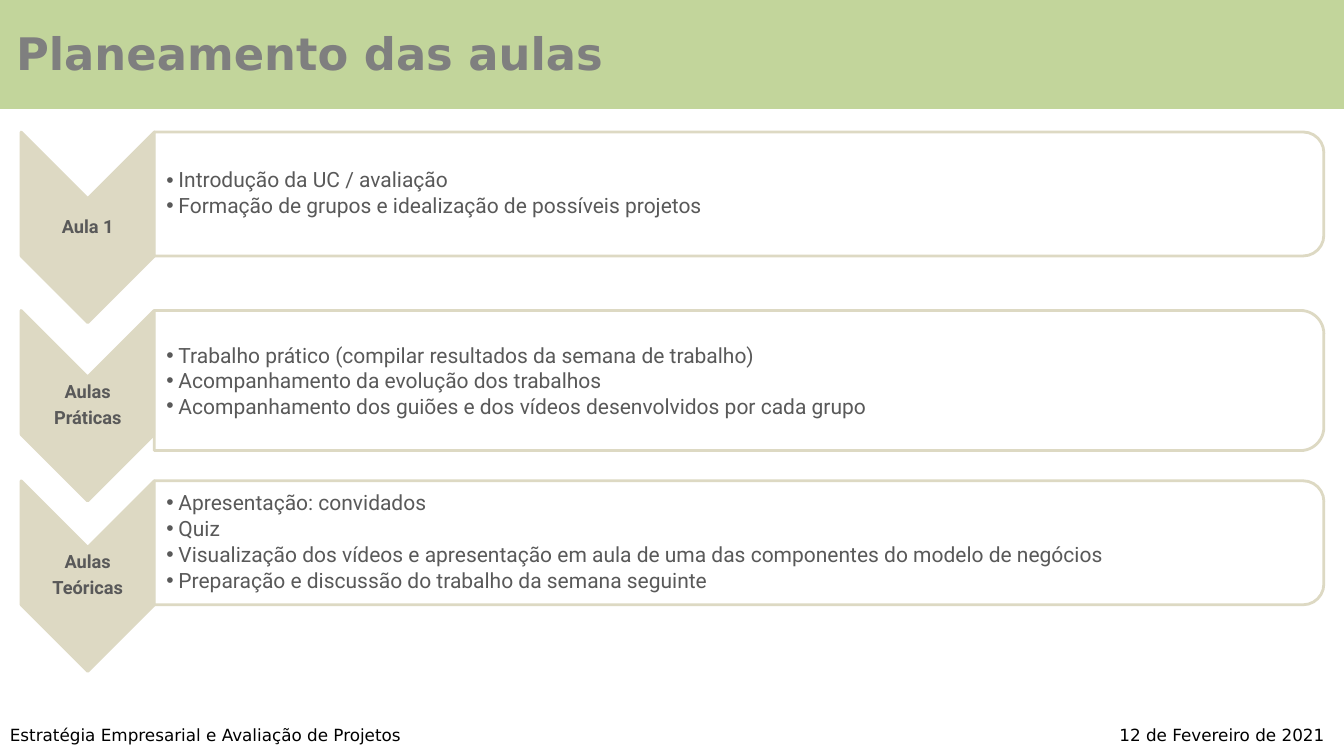
from dataclasses import dataclass

from lxml.etree import SubElement
from pptx import Presentation
from pptx.dml.color import RGBColor
from pptx.enum.shapes import MSO_SHAPE as Preset
from pptx.enum.text import MSO_ANCHOR as Anchor, MSO_AUTO_SIZE as AutoSize, PP_ALIGN as Align
from pptx.oxml.ns import qn
from pptx.shapes.autoshape import Shape
from pptx.slide import Slide
from pptx.text.text import TextFrame
from pptx.util import Inches, Pt

GREEN, SAND, WHITE = "C2D59B", "DDD9C3", "FFFFFF"
GREY, DARK, BLACK = "7F7F7F", "595959", "000000"
CHEVRON_LEFT, CHEVRON_WIDTH, CHEVRON_HEIGHT = 0.21, 1.32, 1.89
PANEL_LEFT, PANEL_WIDTH = 1.53, 11.6


@dataclass
class Lesson:
    top: float
    height: float
    label: str
    topics: str
    spacing: float = 0.9
    gap: float = 2.2


LESSONS = [
    Lesson(1.31, 1.23, "Aula 1",
           "Introdução da UC / avaliação\n"
           "Formação de grupos e idealização de possíveis projetos"),
    Lesson(3.08, 1.39, "Aulas\nPráticas",
           "Trabalho prático (compilar resultados da semana de trabalho)\n"
           "Acompanhamento da evolução dos trabalhos\n"
           "Acompanhamento dos guiões e dos vídeos desenvolvidos por cada grupo",
           spacing=1.0, gap=0),
    Lesson(4.77, 1.23, "Aulas\nTeóricas",
           "Apresentação: convidados\n"
           "Quiz\n"
           "Visualização dos vídeos e apresentação em aula de uma das componentes "
           "do modelo de negócios\n"
           "Preparação e discussão do trabalho da semana seguinte"),
]


def colour(value: str) -> RGBColor:
    return RGBColor.from_string(value)


def write(frame: TextFrame, text: str, *, size: float, color: str, font: str = "DejaVu Sans",
          bold: bool = False, align: Align = Align.LEFT, anchor: Anchor = Anchor.TOP,
          spacing: float = 1.0, gap: float = 0, bullet: bool = False,
          margins: tuple[float, float] = (0.1, 0.05)) -> None:
    """Fill a frame with one paragraph per line; margins are left and the other sides."""
    frame.word_wrap = True
    frame.auto_size = AutoSize.NONE
    frame.vertical_anchor = anchor
    frame.margin_left = Inches(margins[0])
    frame.margin_top = frame.margin_bottom = Inches(margins[1])
    frame.margin_right = Inches(0.1 if margins[1] == 0.05 else margins[1])
    for index, line in enumerate(text.split("\n")):
        para = frame.add_paragraph() if index else frame.paragraphs[0]
        para.alignment = align
        para.line_spacing = spacing
        para.space_before = Pt(gap if index else 0)
        para.space_after = Pt(0)
        span = para.add_run()
        span.text = line
        span.font.name, span.font.size, span.font.bold = font, Pt(size), bold
        span.font.color.rgb = colour(color)
        if bullet:
            para.level = 1
            props = para._p.get_or_add_pPr()
            props.set("marL", str(Inches(0.12)))
            props.set("indent", str(-Inches(0.12)))
            SubElement(props, qn("a:buChar")).set("char", "•")


def place(shape: Shape, left: float, top: float, width: float, height: float) -> None:
    """Move a placeholder and bring it to the front."""
    shape.left, shape.top = Inches(left), Inches(top)
    shape.width, shape.height = Inches(width), Inches(height)
    shape.element.getparent().append(shape.element)


def add_shape(page: Slide, preset: Preset, left: float, top: float, width: float,
              height: float, fill: str, line: str) -> Shape:
    shape = page.shapes.add_shape(preset, Inches(left), Inches(top), Inches(width), Inches(height))
    shape.shadow.inherit = False
    shape.fill.solid()
    shape.fill.fore_color.rgb = colour(fill)
    shape.line.color.rgb = colour(line)
    shape.line.width = Pt(2)
    return shape


def add_turned(page: Slide, preset: Preset, left: float, top: float, width: float,
               height: float, fill: str) -> Shape:
    """Add a shape turned by 90 degrees that covers the given area."""
    shift = (width - height) / 2
    shape = add_shape(page, preset, left + shift, top - shift, height, width, fill, SAND)
    shape.rotation = 90
    return shape


def add_text(page: Slide, left: float, top: float, width: float, height: float,
             text: str, **style) -> None:
    box = page.shapes.add_textbox(Inches(left), Inches(top), Inches(width), Inches(height))
    write(box.text_frame, text, **style)


def add_lesson(page: Slide, lesson: Lesson, body: Shape) -> None:
    chevron = add_turned(page, Preset.CHEVRON, CHEVRON_LEFT, lesson.top,
                         CHEVRON_WIDTH, CHEVRON_HEIGHT, SAND)
    chevron.adjustments[0] = 0.5
    add_text(page, CHEVRON_LEFT, lesson.top + 0.66, CHEVRON_WIDTH, 0.57, lesson.label,
             size=13, color=DARK, font="Roboto", bold=True, align=Align.CENTER,
             anchor=Anchor.MIDDLE, spacing=0.9, gap=4.5, margins=(0.01, 0.01))
    panel = add_turned(page, Preset.ROUND_2_SAME_RECTANGLE, PANEL_LEFT, lesson.top,
                       PANEL_WIDTH, lesson.height, WHITE)
    panel.adjustments[0], panel.adjustments[1] = 0.167, 0
    fill = panel.element.spPr.find(qn("a:solidFill"))
    SubElement(fill[0], qn("a:alpha")).set("val", "90000")
    place(body, PANEL_LEFT, lesson.top + 0.06, PANEL_WIDTH - 0.06, lesson.height - 0.12)
    write(body.text_frame, lesson.topics, size=15, color=DARK, font="Roboto",
          anchor=Anchor.MIDDLE, spacing=lesson.spacing, gap=lesson.gap, bullet=True,
          margins=(0.12, 0.01))


def main() -> None:
    deck = Presentation()
    deck.slide_width, deck.slide_height = Inches(13.33), Inches(7.5)
    page = deck.slides.add_slide(deck.slide_layouts.get_by_name("Comparison"))
    title, *bodies = page.placeholders

    # Header band and title
    add_shape(page, Preset.RECTANGLE, -0.05, -0.03, 13.38, 1.1, GREEN, GREEN)
    place(title, 0.06, 0.21, 6.04, 0.64)
    write(title.text_frame, "Planeamento das aulas", size=32, color=GREY, bold=True)

    # Lessons, each with its own list
    for lesson, body in zip(LESSONS, bodies):
        add_lesson(page, lesson, body)
    for spare in bodies[len(LESSONS):]:
        spare.element.getparent().remove(spare.element)

    # Footer
    add_text(page, 0, 7.14, 4.14, 0.3, "Estratégia Empresarial e Avaliação de Projetos",
             size=12, color=BLACK)
    add_text(page, 10.96, 7.14, 2.33, 0.3, "12 de Fevereiro de 2021 ",
             size=12, color=BLACK, align=Align.RIGHT)

    deck.save("out.pptx")


if __name__ == "__main__":
    main()
